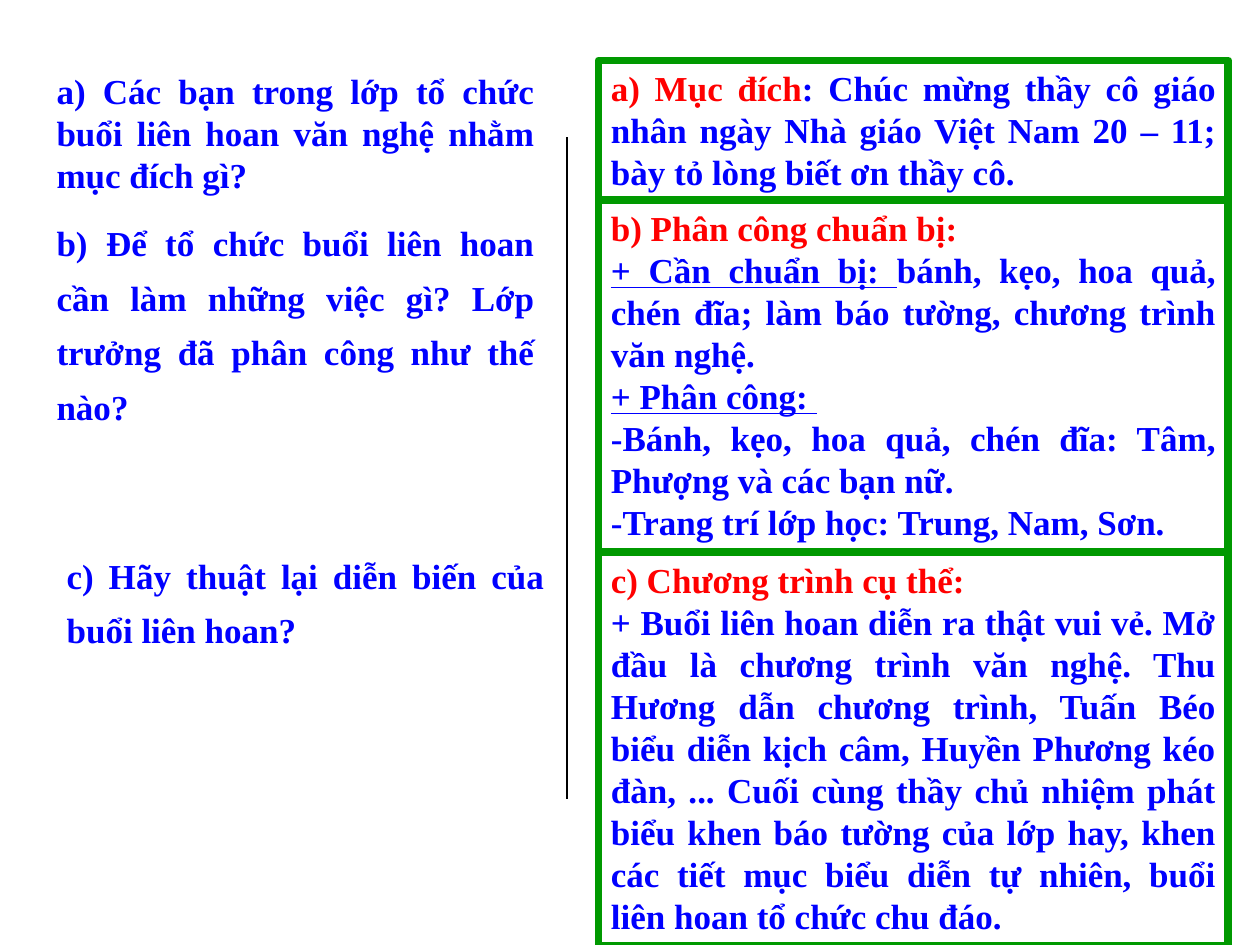
from lxml import etree
from pptx import Presentation
from pptx.dml.color import RGBColor
from pptx.enum.shapes import MSO_CONNECTOR, MSO_SHAPE
from pptx.enum.text import MSO_ANCHOR, MSO_AUTO_SIZE, PP_ALIGN
from pptx.oxml.ns import qn
from pptx.util import Inches, Pt

BLUE = RGBColor(0x00, 0x00, 0xFF)
RED = RGBColor(0xFF, 0x00, 0x00)
GREEN = RGBColor(0x00, 0x99, 0x00)
BLACK = RGBColor(0x00, 0x00, 0x00)

# Run styles: colour, underlined
HEADING = (RED, False)
BODY = (BLUE, False)
LABEL = (BLUE, True)

# Left, top, height, line spacing, text
QUESTIONS = [
    (0.35, 0.5, 1.11, 1.0,
     "a) Các bạn trong lớp tổ chức buổi liên hoan văn nghệ nhằm mục đích gì?"),
    (0.35, 1.61, 1.81, 1.3,
     "b) Để tổ chức buổi liên hoan cần làm những việc gì? "
     "Lớp trưởng đã phân công như thế nào?"),
    (0.43, 4.25, 0.93, 1.3,
     "c) Hãy thuật lại diễn biến của buổi liên hoan?"),
]

# Height and paragraphs, each paragraph a list of (text, style) runs
ANSWERS = [
    (1.11, [
        [("a) Mục đích", HEADING),
         (": Chúc mừng thầy cô giáo nhân ngày Nhà giáo Việt Nam 20 – 11; "
          "bày tỏ lòng biết ơn thầy cô.", BODY)],
    ]),
    (2.79, [
        [("b) Phân công chuẩn bị:", HEADING)],
        [("+ Cần chuẩn bị: ", LABEL),
         ("bánh, kẹo, hoa quả, chén đĩa; làm báo tường, "
          "chương trình văn nghệ.", BODY)],
        [("+ Phân công: ", LABEL)],
        [("-Bánh, kẹo, hoa quả, chén đĩa: Tâm, Phượng và các bạn nữ.", BODY)],
        [("-Trang trí lớp học: Trung, Nam, Sơn.", BODY)],
    ]),
    (3.13, [
        [("c) Chương trình cụ thể:", HEADING)],
        [("+ Buổi liên hoan diễn ra thật vui vẻ. Mở đầu là chương trình văn "
          "nghệ. Thu Hương dẫn chương trình, Tuấn Béo biểu diễn kịch câm, "
          "Huyền Phương kéo đàn, ... Cuối cùng thầy chủ nhiệm phát biểu khen "
          "báo tường của lớp hay, khen các tiết mục biểu diễn tự nhiên, buổi "
          "liên hoan tổ chức chu đáo.", BODY)],
    ]),
]


class SlideBuilder:
    font = "Times New Roman"
    size = Pt(20)

    def __init__(self, slide):
        self.s = slide

    def fill_text(self, tf, paragraphs, spacing=None):
        """Fill a text frame with justified paragraphs of styled runs."""
        tf.word_wrap = True
        tf.auto_size = MSO_AUTO_SIZE.SHAPE_TO_FIT_TEXT
        tf.vertical_anchor = MSO_ANCHOR.TOP
        for i, runs in enumerate(paragraphs):
            p = tf.add_paragraph() if i else tf.paragraphs[0]
            p.alignment = PP_ALIGN.JUSTIFY
            p.line_spacing = spacing
            for text, (color, underline) in runs:
                r = p.add_run()
                r.text = text
                r.font.name = self.font
                r.font.size = self.size
                r.font.bold = True
                r.font.underline = underline
                r.font.color.rgb = color

    def question(self, left, top, height, spacing, text):
        tb = self.s.shapes.add_textbox(
            Inches(left), Inches(top), Inches(3.99), Inches(height))
        self.fill_text(tb.text_frame, [[(text, BODY)]], spacing)

    def answer(self, top, height, paragraphs):
        sp = self.s.shapes.add_shape(
            MSO_SHAPE.RECTANGLE,
            Inches(4.75), Inches(top), Inches(5), Inches(height))
        sp.shadow.inherit = False
        sp.fill.background()
        sp.line.color.rgb = GREEN
        sp.line.width = Pt(4.5)
        self.fill_text(sp.text_frame, paragraphs)

    def divider(self, x, top, bottom):
        line = self.s.shapes.add_connector(
            MSO_CONNECTOR.STRAIGHT,
            Inches(x), Inches(top), Inches(x), Inches(bottom))
        line.line.color.rgb = BLACK
        line.line.width = Pt(0.75)
        etree.SubElement(line._element.spPr, qn("a:effectLst"))


def main():
    prs = Presentation()
    prs.slide_width = Inches(10)
    prs.slide_height = Inches(7.5)
    builder = SlideBuilder(prs.slides.add_slide(prs.slide_layouts[6]))

    for question in QUESTIONS:
        builder.question(*question)
    builder.divider(4.5, 1.09, 6.34)
    top = 0.48
    for height, paragraphs in ANSWERS:
        builder.answer(top, height, paragraphs)
        top += height

    prs.save("out.pptx")


if __name__ == "__main__":
    main()
